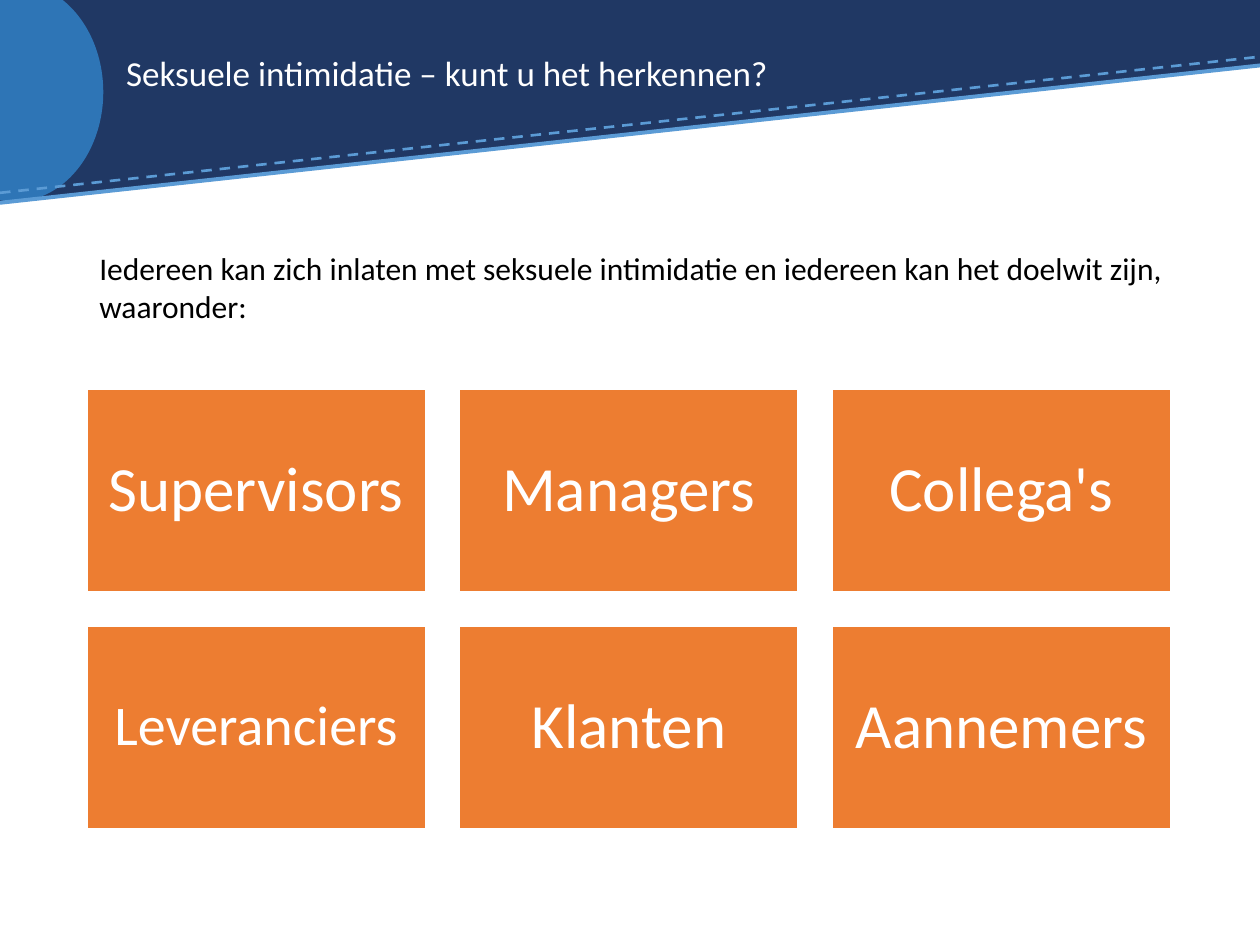
from lxml import etree
from pptx import Presentation
from pptx.dml.color import RGBColor
from pptx.enum import dml, shapes, text
from pptx.oxml.ns import qn
from pptx.util import Pt

COLORS = {"navy": "203864", "blue": "2E75B6", "sky": "5B9BD5",
          "orange": "ED7D31", "white": "FFFFFF", "black": "000000"}


def add_filled(kind, left, top, width, height, color):
    """Add a shadowless preset shape with a solid fill and no outline."""
    sp = s.shapes.add_shape(kind, Pt(left), Pt(top), Pt(width), Pt(height))
    sp.shadow.inherit = False
    sp.fill.solid()
    sp.fill.fore_color.rgb = RGBColor.from_string(COLORS[color])
    sp.line.fill.background()
    return sp


def format_text(p, size, color, align):
    p.alignment = align
    p.font.name = "Calibri"
    p.font.size = Pt(size)
    p.font.color.rgb = RGBColor.from_string(COLORS[color])


prs = Presentation()
prs.slide_width, prs.slide_height = Pt(720), Pt(540)
s = prs.slides.add_slide(prs.slide_layouts[5])

# Header band
add_filled(shapes.MSO_SHAPE.RECTANGLE, 0, 0, 720, 37.4, "navy")
wedge = add_filled(shapes.MSO_SHAPE.RIGHT_TRIANGLE, 0, 36.7, 720, 78.5, "navy")
wedge._element.spPr.find(qn("a:xfrm")).set("flipV", "1")
add_filled(shapes.MSO_SHAPE.OVAL, -42.5, -10, 101.5, 125.2, "blue")

for y_left, y_right, width, dash in (
    (110.2, 32.4, 1.5, dml.MSO_LINE.DASH),
    (115.9, 37.4, 2.25, dml.MSO_LINE.SOLID),
):
    line = s.shapes.add_connector(shapes.MSO_CONNECTOR.STRAIGHT,
                                  Pt(0), Pt(y_left), Pt(720), Pt(y_right))
    line.line.color.rgb = RGBColor.from_string(COLORS["sky"])
    line.line.width = Pt(width)
    line.line.dash_style = dash
    etree.SubElement(line._element.spPr, qn("a:effectLst"))

# Title, brought in front of the band
title = s.shapes.title
s.shapes._spTree.append(title._element)
title.left, title.top, title.width, title.height = Pt(64.8), Pt(14.4), Pt(581), Pt(57.6)
tf = title.text_frame
tf.text = "Seksuele intimidatie – kunt u het herkennen?"
tf.vertical_anchor = text.MSO_ANCHOR.MIDDLE
tf.paragraphs[0].line_spacing = 0.9
format_text(tf.paragraphs[0], 20, "white", text.PP_ALIGN.LEFT)

# Grid of possible harassers and targets
groups = (("Supervisors", "Managers", "Collega's"),
          ("Leveranciers", "Klanten", "Aannemers"))
left, top, width, height, gap = 49.7, 222.5, 193.5, 116, 19.4
for row, names in enumerate(groups):
    for col, name in enumerate(names):
        sp = add_filled(shapes.MSO_SHAPE.RECTANGLE,
                        left + col * (width + gap), top + row * (height + gap),
                        width, height, "orange")
        sp.line.color.rgb = RGBColor.from_string(COLORS["white"])
        sp.line.width = Pt(1)
        size = 32 if name == "Leveranciers" else 36
        tf = sp.text_frame
        tf.text = name
        tf.word_wrap = True
        tf.vertical_anchor = text.MSO_ANCHOR.MIDDLE
        tf.margin_left = tf.margin_right = tf.margin_top = tf.margin_bottom = Pt(size * 0.3)
        tf.paragraphs[0].line_spacing = 0.9
        format_text(tf.paragraphs[0], size, "white", text.PP_ALIGN.CENTER)

# Introduction
intro = s.shapes.add_textbox(Pt(49.7), Pt(139), Pt(652.3), Pt(50.4))
tf = intro.text_frame
tf.word_wrap = True
tf.text = ("Iedereen kan zich inlaten met seksuele intimidatie en iedereen "
           "kan het doelwit zijn, waaronder:")
format_text(tf.paragraphs[0], 18, "black", text.PP_ALIGN.LEFT)

prs.save("out.pptx")
